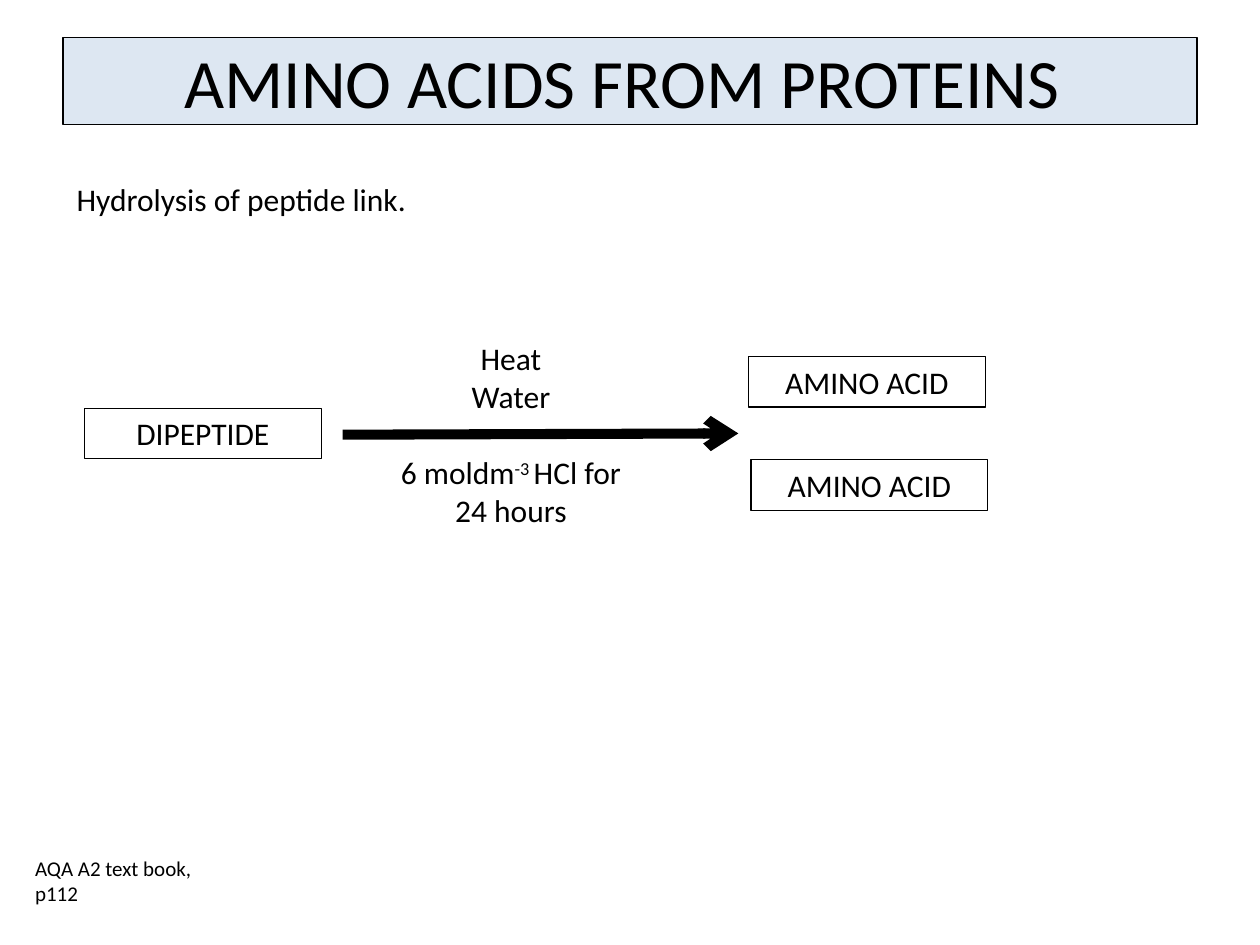
from pptx import Presentation
from pptx import util as u
from pptx.dml.color import RGBColor
from pptx.enum import shapes, text
from pptx.oxml.ns import qn
from lxml import etree

BLACK = RGBColor(0x00, 0x00, 0x00)
BLUE = RGBColor(0x4F, 0x81, 0xBD)
FONT = "Calibri"
BOX_WIDTH, BOX_HEIGHT = 1.88, 0.4


def format_text(text_frame, size, alignment):
    text_frame.word_wrap = True
    for paragraph in text_frame.paragraphs:
        paragraph.alignment = alignment
        for run in paragraph.runs:
            run.font.name = FONT
            run.font.size = u.Pt(size)
            run.font.color.rgb = BLACK


def outline(shape):
    shape.line.color.rgb = BLACK
    shape.line.width = u.Pt(0.75)


def add_title(slide, words):
    title = slide.shapes.title
    title.left, title.top = u.Inches(0.5), u.Inches(0.3)
    title.width, title.height = u.Inches(9), u.Inches(0.69)
    title.fill.solid()
    title.fill.fore_color.rgb = BLUE
    # Let the white background show through the blue
    color = title.fill._xPr.find(qn("a:solidFill"))[0]
    etree.SubElement(color, qn("a:alpha"), val="19000")
    outline(title)
    title.text_frame.text = words
    title.text_frame.vertical_anchor = text.MSO_ANCHOR.MIDDLE
    title.text_frame.auto_size = text.MSO_AUTO_SIZE.NONE
    format_text(title.text_frame, 39.6, text.PP_ALIGN.CENTER)


def add_text(slide, words, left, top, width, height, size=18,
             alignment=text.PP_ALIGN.LEFT):
    box = slide.shapes.add_textbox(u.Inches(left), u.Inches(top),
                                   u.Inches(width), u.Inches(height))
    box.text_frame.text = words
    box.text_frame.auto_size = text.MSO_AUTO_SIZE.SHAPE_TO_FIT_TEXT
    format_text(box.text_frame, size, alignment)
    return box


def add_molecule(slide, name, left, top):
    box = add_text(slide, name, left, top, BOX_WIDTH, BOX_HEIGHT,
                   alignment=text.PP_ALIGN.CENTER)
    outline(box)


def add_reaction_arrow(slide):
    arrow = slide.shapes.add_connector(
        shapes.MSO_CONNECTOR.STRAIGHT,
        u.Inches(2.72), u.Inches(3.45), u.Inches(5.86), u.Inches(3.44))
    arrow.line.color.rgb = BLACK
    arrow.line.width = u.Pt(5.75)
    etree.SubElement(arrow.line._get_or_add_ln(), qn("a:tailEnd"), type="arrow")
    etree.SubElement(arrow._element.spPr, qn("a:effectLst"))


def add_conditions(slide):
    box = add_text(slide, "Heat\nWater", 3.03, 2.64, 2.05, 1.62)
    # Leave room for the arrow between the two groups of conditions
    acid = box.text_frame.add_paragraph()
    acid.space_before = u.Pt(22)
    for words in ("6 moldm", "-3 ", "HCl for 24 hours"):
        acid.add_run().text = words
    acid.runs[1]._r.get_or_add_rPr().set("baseline", "30000")
    format_text(box.text_frame, 18, text.PP_ALIGN.CENTER)


def main():
    presentation = Presentation()
    presentation.slide_width = u.Inches(10)
    presentation.slide_height = u.Inches(7.5)
    slide = presentation.slides.add_slide(presentation.slide_layouts[5])

    # Heading
    add_title(slide, "AMINO ACIDS FROM PROTEINS ")
    add_text(slide, "Hydrolysis of peptide link.", 0.51, 1.38, 9.06, 0.4)

    # Reaction
    for name, left, top in (("DIPEPTIDE", 0.67, 3.24),
                            ("AMINO ACID", 5.96, 3.65),
                            ("AMINO ACID", 5.94, 2.83)):
        add_molecule(slide, name, left, top)
    add_reaction_arrow(slide)
    add_conditions(slide)

    # Reference
    add_text(slide, "AQA A2 text book, p112", 0.18, 6.74, 1.59, 0.5, size=12)

    presentation.save("out.pptx")


if __name__ == "__main__":
    main()
